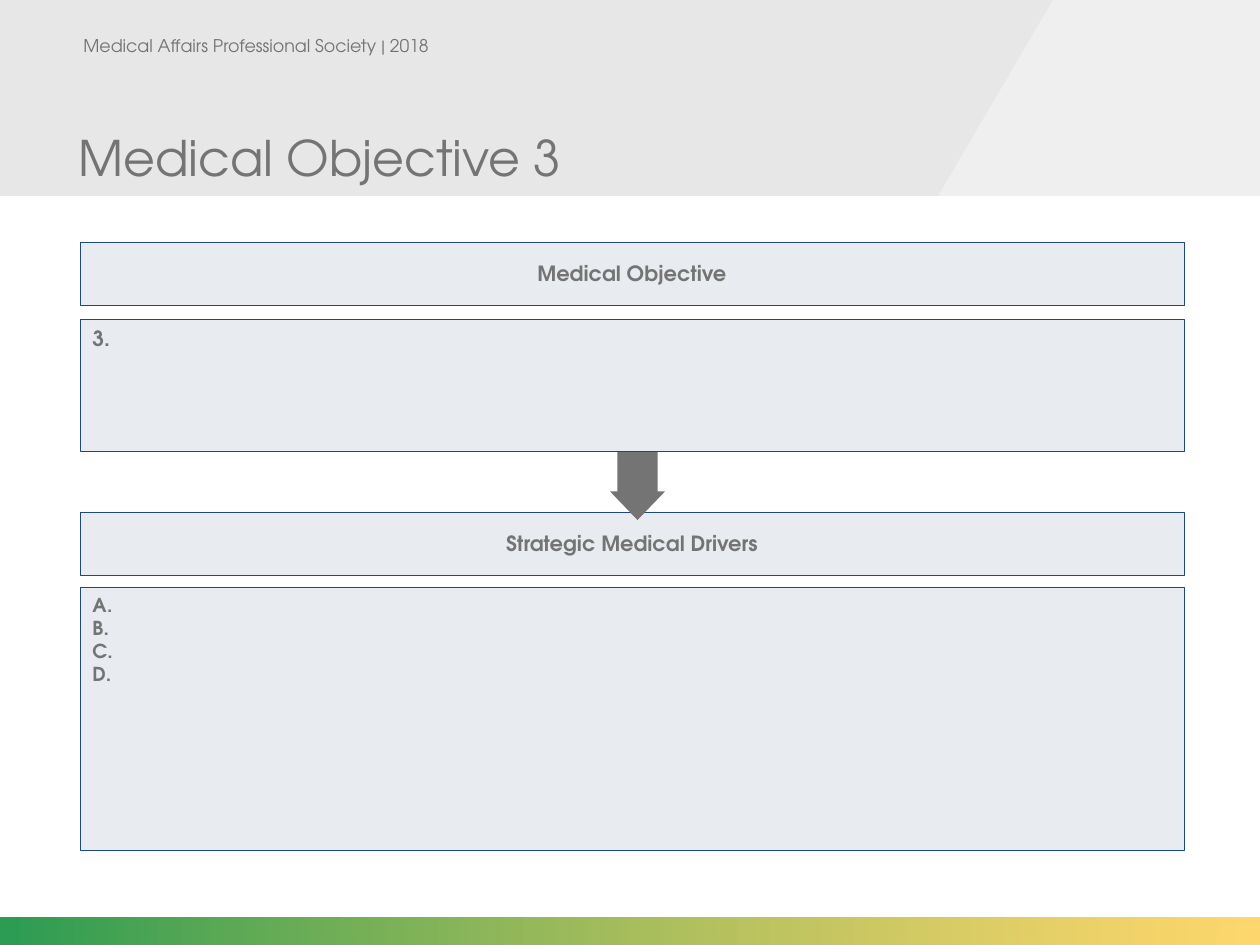
from lxml.etree import SubElement
from pptx import Presentation
from pptx.dml.color import RGBColor
from pptx.enum.shapes import MSO_SHAPE
from pptx.enum.text import MSO_ANCHOR, PP_ALIGN
from pptx.oxml.ns import qn
from pptx.util import Pt

SCALE = 914400 / 126  # EMU in one px
FONT = "TeX Gyre Adventor"
GRAY = RGBColor(0x74, 0x74, 0x74)
NAVY = RGBColor(0x1F, 0x49, 0x7D)
BANNER_GRAY = RGBColor(0xD9, 0xD9, 0xD9)
LIGHT_GRAY = RGBColor(0xF2, 0xF2, 0xF2)
GREEN = RGBColor(0x13, 0x91, 0x3F)
YELLOW = RGBColor(0xFE, 0xBE, 0x0D)


def emu(*lengths):
    return [round(length * SCALE) for length in lengths]


def set_opacity(shape, *percents):
    """Give each fill colour of the shape, in order, its opacity."""
    colors = list(shape._element.spPr.iter(qn("a:srgbClr")))
    for color, percent in zip(colors, percents):
        SubElement(color, qn("a:alpha")).set("val", str(percent * 1000))


def add_plain_shape(slide, kind, box):
    shape = slide.shapes.add_shape(kind, *emu(*box))
    shape.shadow.inherit = False
    shape.line.fill.background()
    return shape


def add_polygon(slide, points, color, opacity):
    builder = slide.shapes.build_freeform(*points[0], scale=SCALE)
    builder.add_line_segments(points[1:], close=True)
    shape = builder.convert_to_shape()
    shape.shadow.inherit = False
    shape.fill.solid()
    shape.fill.fore_color.rgb = color
    set_opacity(shape, opacity)
    shape.line.fill.background()


def write_lines(frame, lines, size, bold=False, align=PP_ALIGN.LEFT, anchor=MSO_ANCHOR.TOP):
    frame.word_wrap = True
    frame.vertical_anchor = anchor
    for index, line in enumerate(lines):
        paragraph = frame.add_paragraph() if index else frame.paragraphs[0]
        paragraph.alignment = align
        run = paragraph.add_run()
        run.text = line
        run.font.name = FONT
        run.font.size = Pt(size)
        run.font.bold = bold
        run.font.color.rgb = GRAY


def add_banner(slide, left, top, width, height):
    right, bottom = left + width, top + height
    # Gray band with a lighter slanted corner
    add_polygon(slide, [(left, top), (right, top), (right, bottom), (left, bottom)],
                BANNER_GRAY, 62)
    add_polygon(slide, [(right - 207, top), (right, top), (right, bottom), (right - 322, bottom)],
                LIGHT_GRAY, 79)
    # Society line and title
    society = slide.shapes.add_textbox(*emu(left + 60, top + 21, 392, 50))
    write_lines(society.text_frame, ["Medical Affairs Professional Society | 2018"], 10,
                align=PP_ALIGN.CENTER, anchor=MSO_ANCHOR.MIDDLE)
    title = slide.shapes.add_textbox(*emu(left + 66, top, 945, height - 3))
    write_lines(title.text_frame, ["Medical Objective 3"], 28, anchor=MSO_ANCHOR.BOTTOM)


def add_footer_bar(slide, *box):
    bar = add_plain_shape(slide, MSO_SHAPE.RECTANGLE, box)
    bar.fill.gradient()
    bar.fill.gradient_angle = 0
    for stop, color, position in zip(bar.fill.gradient_stops, (GREEN, YELLOW), (0, 1)):
        stop.color.rgb = color
        stop.position = position
    set_opacity(bar, 90, 60)


def add_panel(slide, box, lines, size, **text_style):
    panel = add_plain_shape(slide, MSO_SHAPE.RECTANGLE, box)
    panel.fill.solid()
    panel.fill.fore_color.rgb = NAVY
    set_opacity(panel, 10)
    panel.line.color.rgb = NAVY
    panel.line.width = Pt(0.25)
    write_lines(panel.text_frame, lines, size, bold=True, **text_style)


def add_section(slide, left, top, width, height, heading, items, size, gap):
    """A heading panel with a panel of items below it."""
    heading_height = 63
    add_panel(slide, (left, top, width, heading_height), [heading], 12,
              align=PP_ALIGN.CENTER, anchor=MSO_ANCHOR.MIDDLE)
    body_top = heading_height + gap
    add_panel(slide, (left, top + body_top, width, height - body_top), items, size)


def add_down_arrow(slide, *box):
    arrow = add_plain_shape(slide, MSO_SHAPE.DOWN_ARROW, box)
    arrow.adjustments[0] = 0.73
    arrow.adjustments[1] = 0.52
    arrow.fill.solid()
    arrow.fill.fore_color.rgb = GRAY


def main():
    presentation = Presentation()
    presentation.slide_width, presentation.slide_height = emu(1260, 945)
    slide = presentation.slides.add_slide(presentation.slide_layouts[6])

    add_banner(slide, 0, 0, 1260, 196)
    add_footer_bar(slide, 0, 918, 1260, 27)
    add_section(slide, 80, 242, 1104, 209, "Medical Objective", ["3."], 12, gap=14)
    add_section(slide, 80, 512, 1104, 338, "Strategic Medical Drivers",
                ["A.", "B.", "C.", "D."], 11, gap=12)
    add_down_arrow(slide, 610, 452, 55, 68)

    presentation.save("out.pptx")


if __name__ == "__main__":
    main()
